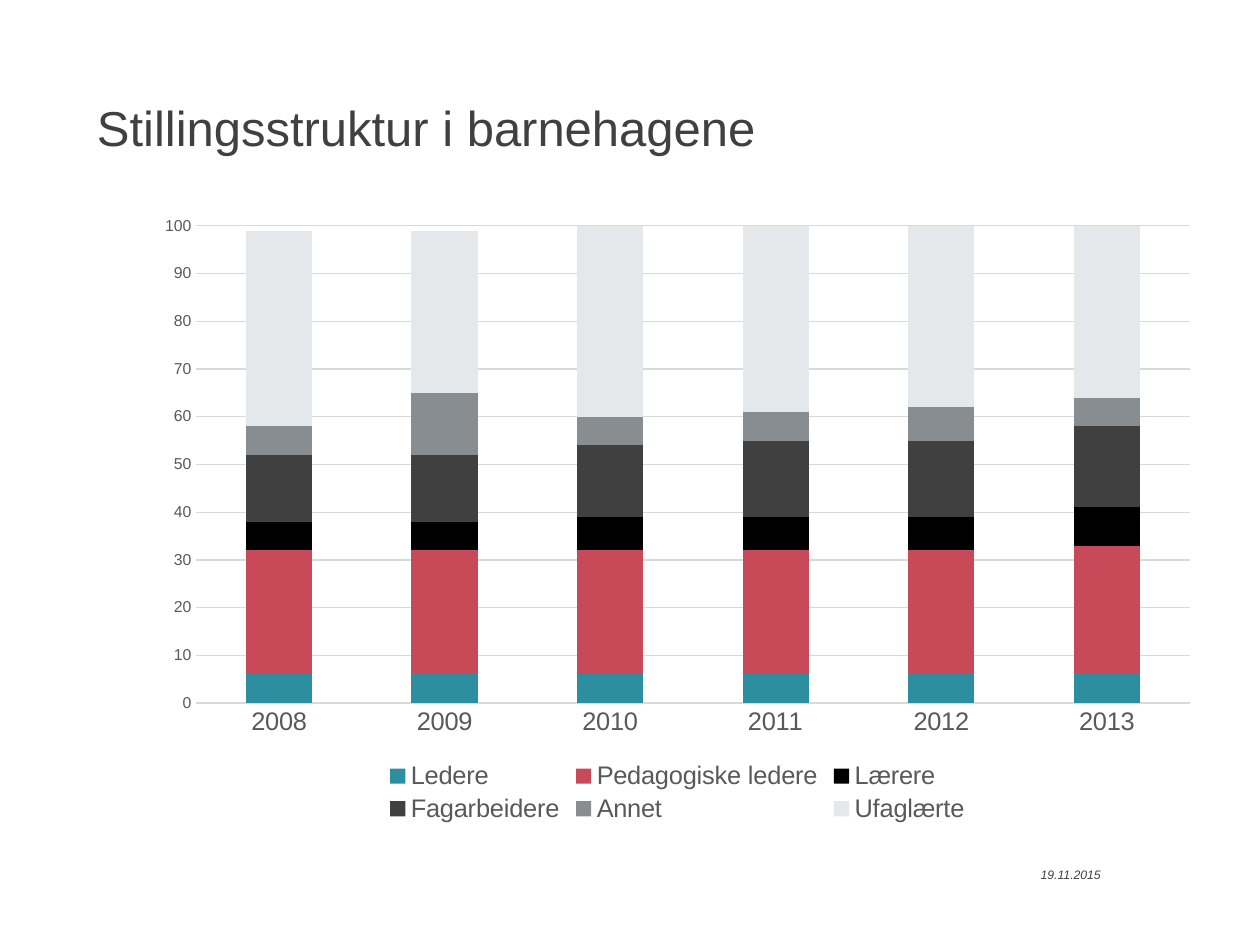
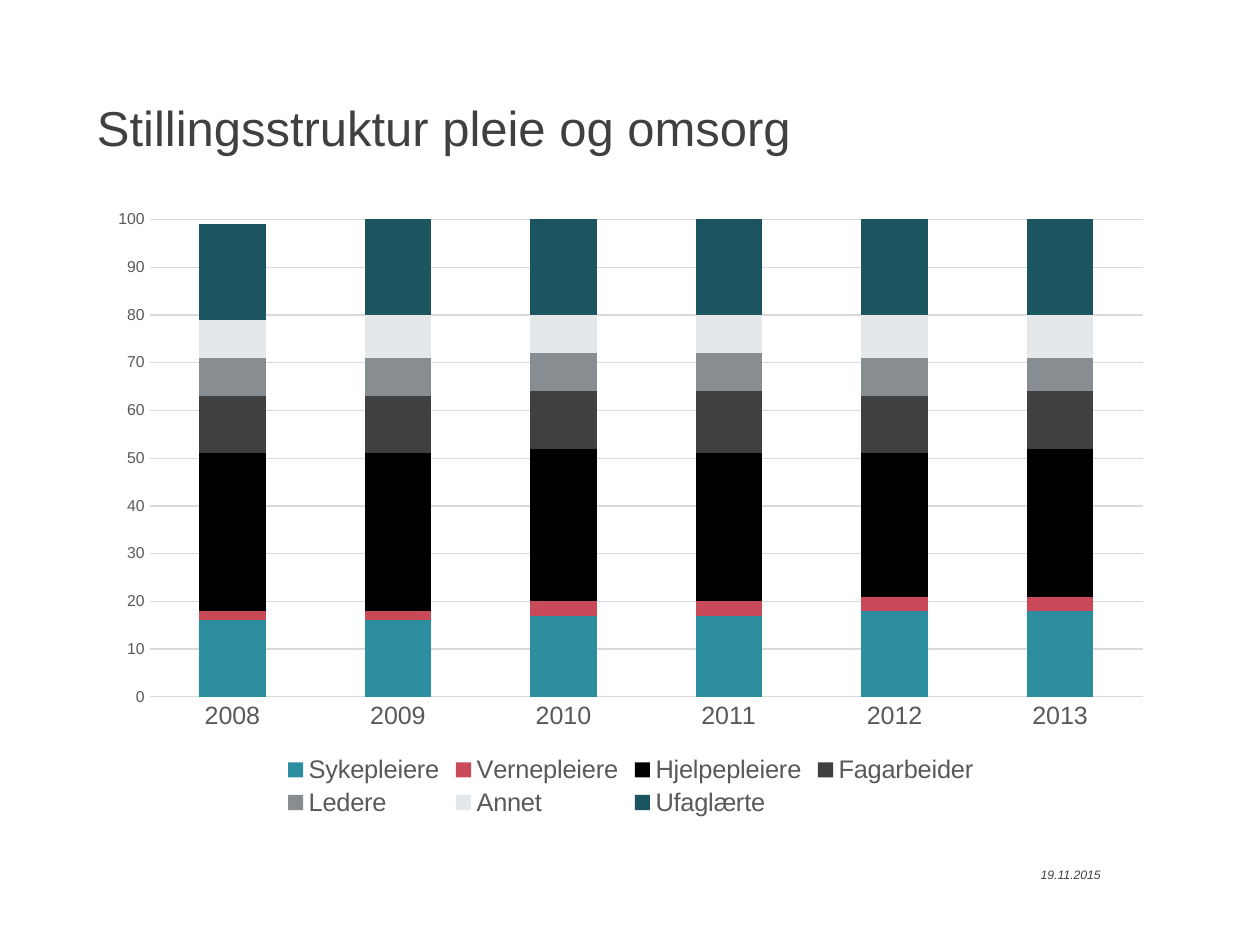
"""Build two slides with stacked columns of staff structure by year."""
from collections import namedtuple

from pptx import Presentation
from pptx.chart.data import CategoryChartData
from pptx.dml.color import RGBColor
from pptx.enum.chart import XL_CHART_TYPE, XL_LEGEND_POSITION, XL_TICK_MARK
from pptx.enum.text import MSO_ANCHOR
from pptx.util import Inches, Pt

STACKED = XL_CHART_TYPE.COLUMN_STACKED
LEGEND_BOTTOM = XL_LEGEND_POSITION.BOTTOM
NO_TICK = XL_TICK_MARK.NONE
TOP, MIDDLE = MSO_ANCHOR.TOP, MSO_ANCHOR.MIDDLE

Box = namedtuple("Box", "left top width height")

COLUMNS, ROWS = 100, 75
TITLE_AREA = Box(7.7, 7.3, 84.6, 4)
DATE_AREA = Box(82.6, 68.8, 6, 1.2)
FONT = "Arial"
COLORS = {
    "text": "404040",
    "label": "595959",
    "grid": "D9D9D9",
    "teal": "2D8E9F",
    "red": "C84957",
    "black": "000000",
    "charcoal": "404040",
    "gray": "878D91",
    "pale": "E4E8EB",
    "petrol": "1B555F",
}
SERIES_COLORS = ("teal", "red", "black", "charcoal", "gray", "pale", "petrol")
DATE = "19.11.2015"
YEARS = ("2008", "2009", "2010", "2011", "2012", "2013")

KINDERGARTEN = {
    "Ledere": (6, 6, 6, 6, 6, 6),
    "Pedagogiske ledere": (26, 26, 26, 26, 26, 27),
    "Lærere": (6, 6, 7, 7, 7, 8),
    "Fagarbeidere": (14, 14, 15, 16, 16, 17),
    "Annet": (6, 13, 6, 6, 7, 6),
    "Ufaglærte": (41, 34, 40, 39, 38, 37),
}
CARE = {
    "Sykepleiere": (16, 16, 17, 17, 18, 18),
    "Vernepleiere": (2, 2, 3, 3, 3, 3),
    "Hjelpepleiere": (33, 33, 32, 31, 30, 31),
    "Fagarbeider": (12, 12, 12, 13, 12, 12),
    "Ledere": (8, 8, 8, 8, 8, 7),
    "Annet": (8, 9, 8, 8, 9, 9),
    "Ufaglærte": (20, 20, 21, 20, 20, 20),
}


def color(name):
    """Return the named colour."""
    return RGBColor.from_string(COLORS[name])


def place(area, frame):
    """Turn an area in grid units into a box inside the frame."""
    column, row = frame.width / COLUMNS, frame.height / ROWS
    return Box(
        round(frame.left + area.left * column),
        round(frame.top + area.top * row),
        round(area.width * column),
        round(area.height * row),
    )


def style_font(font, size, color_name="label"):
    """Give a font the shared typeface, a size and a colour."""
    font.name = FONT
    font.size = Pt(size)
    font.color.rgb = color(color_name)


def style_line(line):
    """Draw a thin grid-coloured line."""
    line.color.rgb = color("grid")
    line.width = Pt(0.75)


def add_text(slide, box, text, size, anchor=TOP, italic=None, spacing=None):
    """Add a one-line text box without insets."""
    frame = slide.shapes.add_textbox(*box).text_frame
    frame.word_wrap = True
    frame.vertical_anchor = anchor
    frame.margin_left = frame.margin_top = 0
    frame.margin_right = frame.margin_bottom = 0
    paragraph = frame.paragraphs[0]
    paragraph.line_spacing = spacing
    run = paragraph.add_run()
    run.text = text
    style_font(run.font, size, "text")
    run.font.italic = italic


def style_axes(chart, category_size):
    """Style the year axis, the 0 to 100 axis and its gridlines."""
    years, shares = chart.category_axis, chart.value_axis
    for axis, size in ((years, category_size), (shares, 9)):
        axis.major_tick_mark = axis.minor_tick_mark = NO_TICK
        style_font(axis.tick_labels.font, size)
    style_line(years.format.line)
    shares.minimum_scale, shares.maximum_scale = 0, 100
    shares.major_unit = 10
    shares.format.line.fill.background()
    shares.has_major_gridlines = True
    style_line(shares.major_gridlines.format.line)


def add_staff_chart(slide, box, staff, category_size):
    """Add the stacked columns with one series per staff group."""
    data = CategoryChartData(number_format="0")
    data.categories = YEARS
    for group, values in staff.items():
        data.add_series(group, values)
    chart = slide.shapes.add_chart(STACKED, *box, data).chart
    style_font(chart.font, 10, "black")
    chart.has_title = False
    chart.has_legend = True
    chart.legend.position = LEGEND_BOTTOM
    chart.legend.include_in_layout = False
    style_font(chart.legend.font, 14.5)
    style_axes(chart, category_size)
    plot = chart.plots[0]
    plot.gap_width, plot.overlap = 150, 100
    plot.vary_by_categories = False
    for series, name in zip(plot.series, SERIES_COLORS):
        series.invert_if_negative = False
        series.format.fill.solid()
        series.format.fill.fore_color.rgb = color(name)


def add_staff_slide(presentation, title, staff, chart_area, category_size):
    """Add a slide with title, date and staff chart."""
    slide = presentation.slides.add_slide(presentation.slide_layouts[6])
    page = Box(0, 0, presentation.slide_width, presentation.slide_height)
    add_text(slide, place(TITLE_AREA, page), title, 28, spacing=1.1)
    add_text(slide, place(DATE_AREA, page), DATE, 7, MIDDLE, italic=True)
    add_staff_chart(slide, place(chart_area, page), staff, category_size)


def main():
    """Build and save the presentation."""
    presentation = Presentation()
    presentation.slide_width = Inches(10)
    presentation.slide_height = Inches(7.5)
    add_staff_slide(presentation, "Stillingsstruktur i barnehagene",
                    KINDERGARTEN, Box(11.4, 16.2, 84.7, 49.5), 14.5)
    add_staff_slide(presentation, "Stillingsstruktur pleie og omsorg",
                    CARE, Box(7.7, 15.7, 84.7, 49.5), 14.3)
    presentation.save("out.pptx")


if __name__ == "__main__":
    main()
